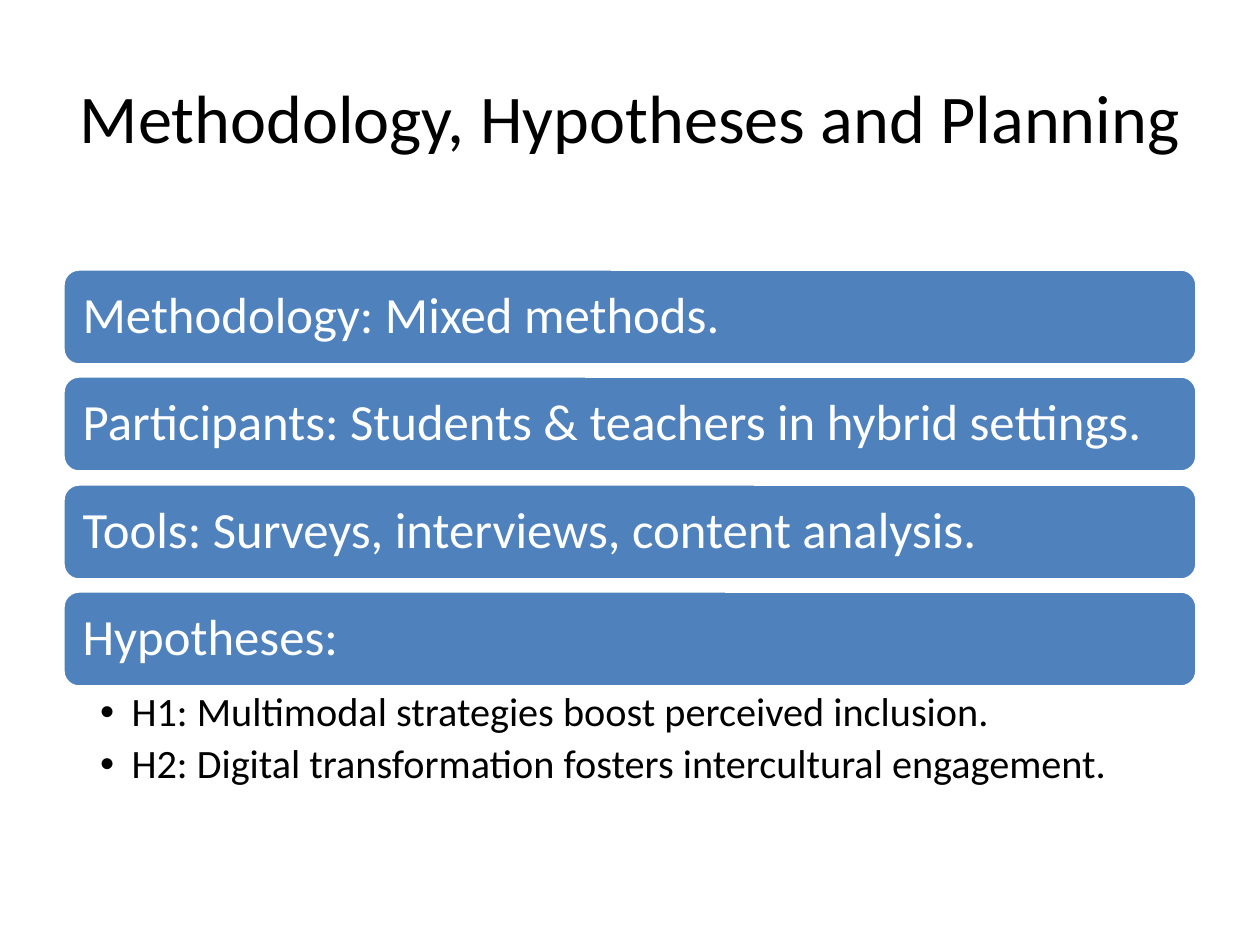
"""Build the slide on methodology, hypotheses and planning."""
from lxml import etree
from pptx import Presentation
from pptx import util as u
from pptx.dml.color import RGBColor
from pptx.enum import shapes, text
from pptx.oxml.ns import qn


def px(n):
    return u.Emu(round(n * 914400 / 126))


def style(para, size, color):
    for run in para.runs:
        run.font.name = "Calibri"
        run.font.size = u.Pt(size)
        run.font.color.rgb = RGBColor.from_string(color)


deck = Presentation()
deck.slide_width, deck.slide_height = px(1260), px(945)
slide = deck.slides.add_slide(deck.slide_layouts[5])

title = slide.shapes.title
title.left, title.top, title.width, title.height = px(63), px(38), px(1134), px(157)
frame = title.text_frame
frame.text = "Methodology, Hypotheses and Planning"
frame.margin_left = frame.margin_right = frame.margin_top = frame.margin_bottom = px(6)
frame.vertical_anchor = text.MSO_ANCHOR.MIDDLE
frame.paragraphs[0].alignment = text.PP_ALIGN.CENTER
style(frame.paragraphs[0], 39, "000000")

bars = [
    "Methodology: Mixed methods.",
    "Participants: Students & teachers in hybrid settings.",
    "Tools: Surveys, interviews, content analysis.",
    "Hypotheses:",
]
for i, words in enumerate(bars):
    top = 269 + i * 215 // 2
    bar = slide.shapes.add_shape(
        shapes.MSO_SHAPE.ROUNDED_RECTANGLE, px(63), px(top), px(1134), px(96))
    bar.shadow.inherit = False
    bar.fill.solid()
    bar.fill.fore_color.rgb = RGBColor.from_string("4F81BD")
    bar.line.color.rgb = RGBColor.from_string("FFFFFF")
    bar.line.width = u.Pt(2)
    frame = bar.text_frame
    frame.text = words
    frame.word_wrap = True
    frame.vertical_anchor = text.MSO_ANCHOR.MIDDLE
    frame.margin_left = frame.margin_right = frame.margin_top = frame.margin_bottom = px(15)
    para = frame.paragraphs[0]
    para.alignment = text.PP_ALIGN.LEFT
    para.line_spacing = 0.9
    para.space_before = u.Pt(12)
    style(para, 29, "FFFFFF")

box = slide.shapes.add_textbox(px(95), px(687), px(1080), px(105))
frame = box.text_frame
frame.word_wrap = True
frame.margin_left = frame.margin_right = frame.margin_top = frame.margin_bottom = px(5)
frame.text = (
    "H1: Multimodal strategies boost perceived inclusion.\n"
    "H2: Digital transformation fosters intercultural engagement."
)
for para in frame.paragraphs:
    para.level = 1
    para.line_spacing = 0.9
    para.space_before = u.Pt(5)
    props = para._p.get_or_add_pPr()
    props.set("marL", str(u.Inches(0.25)))
    props.set("indent", str(-u.Inches(0.25)))
    etree.SubElement(props, qn("a:buFont")).set("typeface", "Arial")
    etree.SubElement(props, qn("a:buChar")).set("char", "•")
    style(para, 23, "000000")

deck.save("out.pptx")
